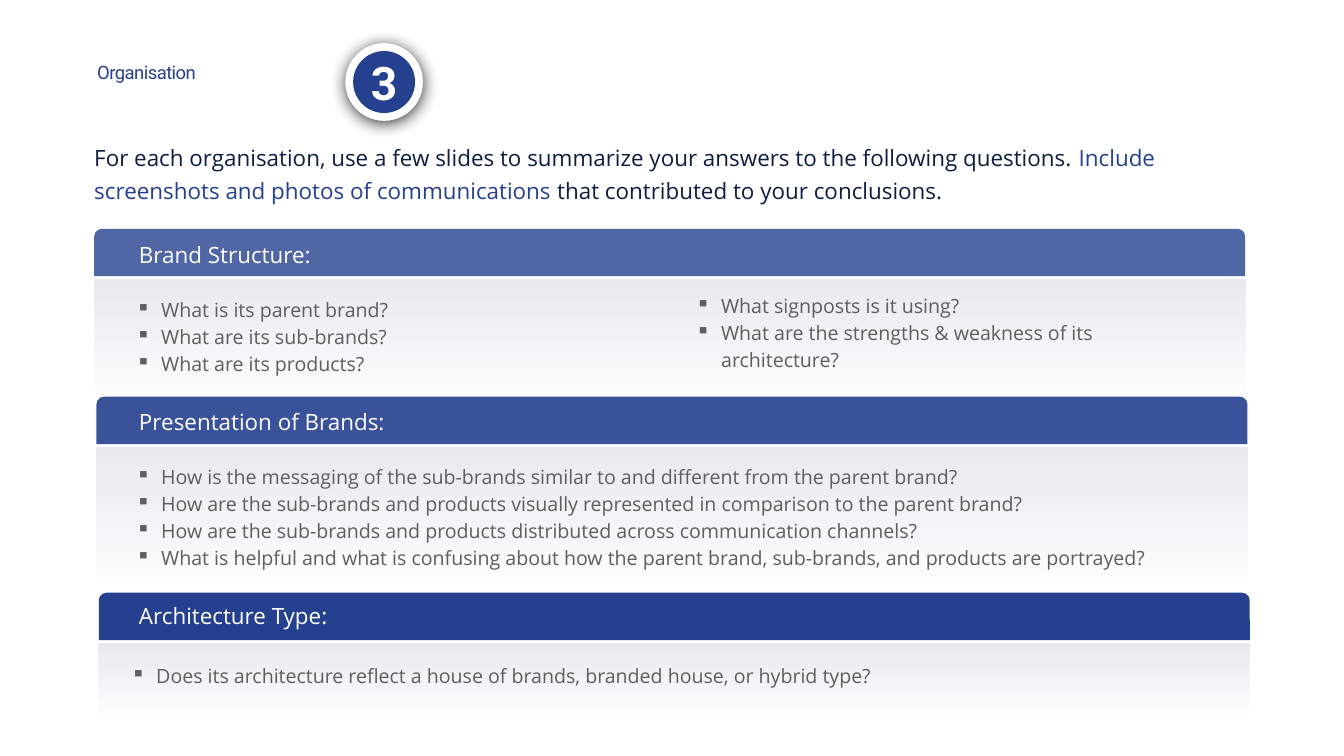
import pptx
import pptx.util
import pptx.dml.color
import pptx.enum.shapes
import pptx.enum.text
import pptx.oxml
import pptx.oxml.ns

RGB = pptx.dml.color.RGBColor
SHAPE = pptx.enum.shapes.MSO_SHAPE
ANCHOR = pptx.enum.text.MSO_ANCHOR
ALIGN = pptx.enum.text.PP_ALIGN
FIT = pptx.enum.text.MSO_AUTO_SIZE
Pt, Inches, qn = pptx.util.Pt, pptx.util.Inches, pptx.oxml.ns.qn

BLUE = RGB(0x25, 0x40, 0x8F)
NAVY = RGB(0x0E, 0x1D, 0x42)
GREY = RGB(0x5E, 0x5E, 0x5E)
WHITE = RGB(0xFF, 0xFF, 0xFF)

WIDTH, HEIGHT = 26.67, 15
COL, ROW = WIDTH / 100, HEIGHT / 100  # grid of 100 columns and 100 rows

TITLE = dict(name="Roboto", size=Pt(26.4), color=BLUE)
NUMBER = dict(name="Roboto", size=Pt(66), color=WHITE, bold=True)
INTRO = dict(name="Open Sans", size=Pt(32), color=NAVY)
HEADING = {**INTRO, "color": WHITE}
ITEM = dict(name="Open Sans", size=Pt(28), color=GREY)

SHADOW = (
    '<a:effectLst xmlns:a="http://schemas.openxmlformats.org/drawingml/2006/main">'
    '<a:outerShdw blurRad="292100" dist="50800" dir="5400000" rotWithShape="0">'
    '<a:srgbClr val="2F2F2F"><a:alpha val="92000"/></a:srgbClr>'
    '</a:outerShdw></a:effectLst>')


class Deck:
    """Style and current slide; boxes are (column, row, columns, rows)."""

    def __init__(self):
        self.prs = pptx.Presentation()
        self.prs.slide_width, self.prs.slide_height = Inches(WIDTH), Inches(HEIGHT)
        self.s = self.prs.slides.add_slide(self.prs.slide_layouts[6])
        self.shapes = self.s.shapes

    def place(self, box):
        x, y, w, h = box
        return Inches(x * COL), Inches(y * ROW), Inches(w * COL), Inches(h * ROW)

    def opacity(self, sp, *shares):
        for clr, share in zip(sp._element.spPr.iter(qn("a:srgbClr")), shares):
            alpha = clr.makeelement(qn("a:alpha"), {"val": str(share * 1000)})
            clr.append(alpha)

    def shape(self, kind, box, color):
        sp = self.shapes.add_shape(kind, *self.place(box))
        sp.shadow.inherit = False
        sp.line.fill.background()
        sp.fill.solid()
        sp.fill.fore_color.rgb = color
        return sp

    def bar(self, box, share):
        sp = self.shape(SHAPE.ROUND_2_SAME_RECTANGLE, box, BLUE)
        sp.adjustments[0] = 0.16
        if share < 100:
            self.opacity(sp, share)

    def panel(self, box):
        sp = self.shape(SHAPE.RECTANGLE, box, NAVY)
        sp.fill.gradient()
        sp.fill.gradient_angle = 270
        for stop, position in zip(sp.fill.gradient_stops, (0, 1)):
            stop.position = position
            stop.color.rgb = NAVY
        self.opacity(sp, 10, 0)

    def disc(self, cx, cy, d, color):
        w = d * ROW / COL
        return self.shape(SHAPE.OVAL, (cx - w / 2, cy - d / 2, w, d), color)

    def text(self, box, paragraphs, font, inset=0.06, anchor=ANCHOR.MIDDLE,
             fit=FIT.SHAPE_TO_FIT_TEXT, **layout):
        """Each paragraph is a list of (words, font changes)."""
        tf = self.shapes.add_textbox(*self.place(box)).text_frame
        frame = dict(word_wrap=True, auto_size=fit, vertical_anchor=anchor)
        for side in ("left", "top", "right", "bottom"):
            frame["margin_" + side] = Inches(inset)
        for key, value in frame.items():
            setattr(tf, key, value)
        for i, runs in enumerate(paragraphs):
            p = tf.paragraphs[0] if i == 0 else tf.add_paragraph()
            for key, value in layout.items():
                setattr(p, key, value)
            for words, changes in runs:
                r = p.add_run()
                r.text = words
                for key, value in {**font, **changes}.items():
                    if key == "color":
                        r.font.color.rgb = value
                    else:
                        setattr(r.font, key, value)
        return tf

    def bullets(self, box, items):
        tf = self.text(box, [[(item, {})] for item in items], ITEM, inset=0,
                       anchor=ANCHOR.TOP, line_spacing=1.15)
        for p in tf.paragraphs:
            pPr = p._p.get_or_add_pPr()
            pPr.set("marL", str(Inches(0.5)))
            pPr.set("indent", str(-Inches(0.5)))
            pPr.append(pPr.makeelement(qn("a:buChar"), {"char": "▪"}))


# Section: heading, left, top, panel rows, bar opacity, heading drop, bullet lists
SECTIONS = [
    ("Brand Structure:", 7.01, 30.27, 16.73, 80, 1.2, [
        ((10.12, 38.93, 37.27, 10.4), [
            "What is its parent brand?",
            "What are its sub-brands?",
            "What are its products?"]),
        ((51.78, 38.4, 37.27, 6.8), [
            "What signposts is it using?",
            "What are the strengths & weakness of its architecture?"])]),
    ("Presentation of Brands:", 7.18, 52.47, 19.6, 90, 1.13, [
        ((10.12, 61.07, 79.68, 14), [
            "How is the messaging of the sub-brands similar to and different from the parent brand?",
            "How are the sub-brands and products visually represented in comparison to the parent brand?",
            "How are the sub-brands and products distributed across communication channels?",
            "What is helpful and what is confusing about how the parent brand, sub-brands, "
            "and products are portrayed?"])]),
    ("Architecture Type:", 7.35, 78.4, 10.27, 100, 0.87, [
        ((9.75, 87.33, 79.3, 3.13), [
            "Does its architecture reflect a house of brands, branded house, or hybrid type?"])]),
]


def main():
    deck = Deck()

    # Title and introduction
    tf = deck.text((7.01, 8.27, 56.62, 8.4), [[("Organisation", {})]], TITLE,
                   anchor=ANCHOR.TOP, fit=FIT.NONE, line_spacing=0.8)
    tf.paragraphs[0].runs[0]._r.get_or_add_rPr().set("spc", "-80")
    deck.text((7.01, 18.33, 85.98, 8.53), [[
        ("For each organisation, use a few slides to summarize your answers "
         "to the following questions. ", {}),
        ("Include screenshots and photos of communications ", {"color": BLUE}),
        ("that contributed to your conclusions.", {})]],
        INTRO, inset=0, line_spacing=Pt(47))

    # Sections: fading panel, header bar, heading and bullets
    for heading, x, y, rows, share, drop, lists in SECTIONS:
        deck.panel((x, y + 6.67, 85.64, rows))
        deck.bar((x, y, 85.64, 6.27), share)
        deck.text((10.12, y + drop, 22.12, 4.27), [[(heading, {})]], HEADING)
        for box, items in lists:
            deck.bullets(box, items)

    # Numbered badge
    deck.shapes = deck.s.shapes.add_group_shape().shapes
    cx, cy = 28.58, 10.85
    rim = deck.disc(cx, cy, 10.27, WHITE)
    spPr = rim._element.spPr
    spPr.replace(spPr.find(qn("a:effectLst")), pptx.oxml.parse_xml(SHADOW))
    deck.disc(cx, cy, 8.2, BLUE)
    deck.text((cx - 1.63, cy - 4.03, 3.26, 8.06), [[("3", {})]], NUMBER,
              alignment=ALIGN.CENTER)

    deck.prs.save("out.pptx")


if __name__ == "__main__":
    main()
